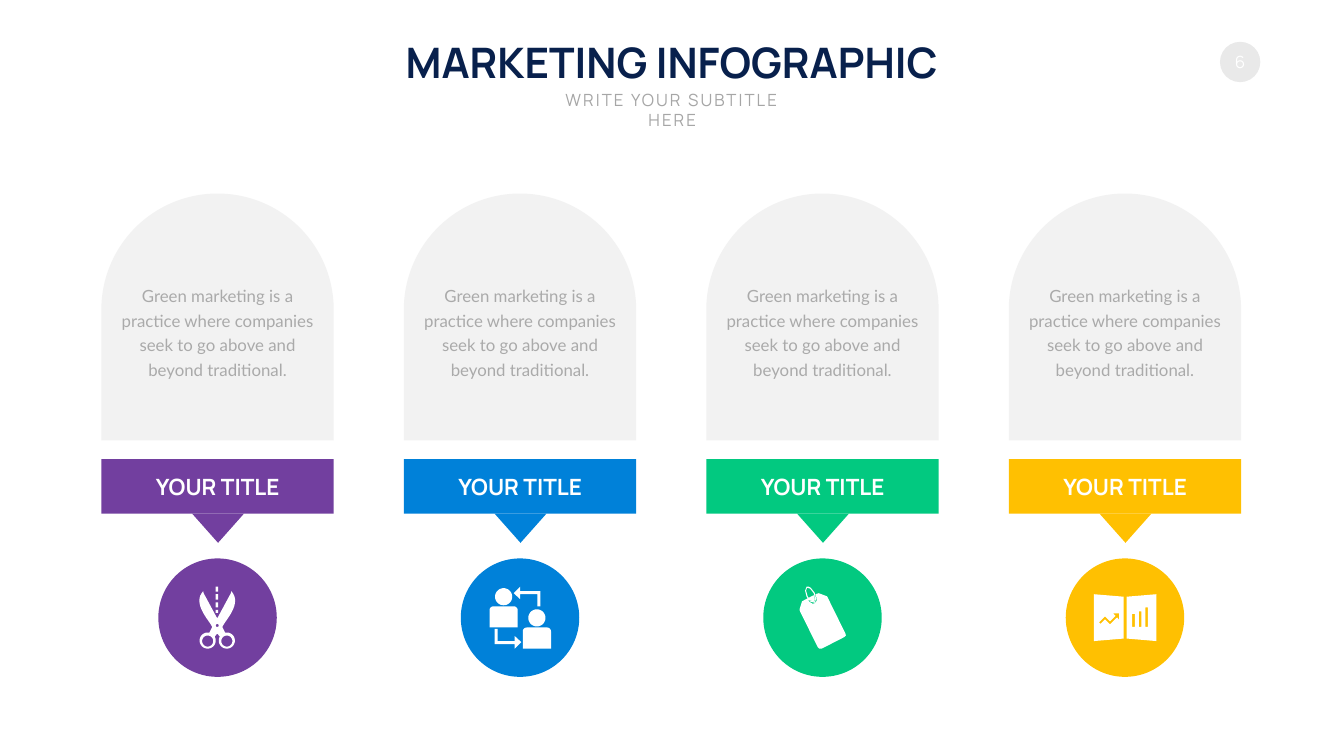
import math

from pptx import Presentation
from pptx.dml.color import RGBColor
from pptx.enum.shapes import MSO_SHAPE
from pptx.enum.text import MSO_ANCHOR, MSO_AUTO_SIZE, PP_ALIGN
from pptx.util import Inches, Pt

RECTANGLE = MSO_SHAPE.RECTANGLE
TRIANGLE = MSO_SHAPE.ISOSCELES_TRIANGLE
OVAL = MSO_SHAPE.OVAL
ARCH = MSO_SHAPE.ROUND_2_SAME_RECTANGLE
CENTER = PP_ALIGN.CENTER
TOP, MIDDLE = MSO_ANCHOR.TOP, MSO_ANCHOR.MIDDLE

COLORS = {
    "navy": "08204C", "subtitle": "A6A6A6", "body": "AAAAAA",
    "white": "FFFFFF", "arch": "F2F2F2", "badge": "E9E9E9",
    "purple": "723F9F", "blue": "0081D9", "green": "02C980", "yellow": "FFC001",
}
HEADING_FONT, BODY_FONT = "Manrope", "Lato"
BODY_TEXT = ("Green marketing is a practice where companies "
             "seek to go above and beyond traditional.")
FIRST_COLUMN, COLUMN_PITCH = 2.01, 6
COLUMN_WIDTH, DISC_SIZE, DISC_TOP = 4.61, 2.35, 11.08


def color(name):
    return RGBColor.from_string(COLORS[name])


def paint(shape, fill):
    shape.shadow.inherit = False
    shape.fill.solid()
    shape.fill.fore_color.rgb = color(fill)
    shape.line.fill.background()


def add_block(slide, kind, left, top, width, height, fill):
    shape = slide.shapes.add_shape(
        kind, Inches(left), Inches(top), Inches(width), Inches(height))
    paint(shape, fill)
    return shape


def write(box, text, size, ink, font=HEADING_FONT, bold=False, anchor=MIDDLE):
    """Put one centred paragraph in a shape and return the paragraph."""
    frame = box.text_frame
    frame.word_wrap = True
    frame.vertical_anchor = anchor
    frame.text = text
    para = frame.paragraphs[0]
    para.alignment = CENTER
    para.space_before = Pt(0)
    para.font.name = font
    para.font.size = Pt(size)
    para.font.bold = bold
    para.font.color.rgb = color(ink)
    return para


def add_label(slide, left, top, width, height, *args, **kwargs):
    box = slide.shapes.add_textbox(
        Inches(left), Inches(top), Inches(width), Inches(height))
    return write(box, *args, **kwargs)


def place(shape, left, top, width, height):
    shape.left, shape.top = Inches(left), Inches(top)
    shape.width, shape.height = Inches(width), Inches(height)
    shape.text_frame.auto_size = MSO_AUTO_SIZE.NONE


def arc(x, y, radius, start=0, end=360, steps=36):
    angles = [math.radians(start + (end - start) * i / steps) for i in range(steps + 1)]
    return [(x + radius * math.cos(a), y + radius * math.sin(a)) for a in angles]


def bezier(p0, p1, p2, p3, steps=12):
    points = []
    for i in range(steps + 1):
        t = i / steps
        weights = ((1 - t) ** 3, 3 * t * (1 - t) ** 2, 3 * t * t * (1 - t), t ** 3)
        points.append(tuple(sum(w * p[axis] for w, p in zip(weights, (p0, p1, p2, p3)))
                            for axis in (0, 1)))
    return points


def bar(x, y, width, height):
    return [(x, y), (x + width, y), (x + width, y + height), (x, y + height)]


def mirror(points, axis):
    return [(2 * axis - x, y) for x, y in reversed(points)]


def scissors():
    axis = 0.35
    half = [(axis, 0.63), (0.62, 0.13), (0.63, 0.09),
            *bezier((0.66, 0.13), (0.79, 0.32), (0.61, 0.56), (0.49, 0.73)),
            (0.45, 0.8), (0.51, 0.92), *arc(0.54, 1.07, 0.16, -101, 210),
            (0.4, 0.99), (axis, 0.93)]
    finger_hole = arc(0.54, 1.08, 0.11)
    dashes = [bar(0.32, y, 0.05, height)
              for y, height in ((0, 0.1), (0.15, 0.11), (0.31, 0.1), (0.46, 0.06))]
    return [half + mirror(half, axis), finger_hole, mirror(finger_hole, axis),
            arc(axis, 0.77, 0.03), *dashes]


def person(x, y):
    body = [*arc(x + 0.08, y + 0.47, 0.08, 180, 270, 6),
            *arc(x + 0.48, y + 0.47, 0.08, 270, 360, 6),
            (x + 0.56, y + 0.81), (x, y + 0.81)]
    return [arc(x + 0.28, y + 0.2, 0.17), body]


def people():
    arrow = [(0.61, 0), (0.61, 0.09), (1.01, 0.09), (1.01, 0.39), (0.95, 0.39),
             (0.95, 0.15), (0.61, 0.15), (0.61, 0.25), (0.48, 0.13)]
    turned = [(1.11 - x, 1.23 - y) for x, y in arrow]
    return [*person(0, 0), *person(0.66, 0.42), arrow, turned]


def price_tag():
    body = [(0.38, 0.13), (0.54, 0.19), (0.55, 0.2), (0.91, 0.93), (0.92, 0.97),
            (0.89, 1), (0.44, 1.23), (0.39, 1.23), (0.36, 1.2), (0, 0.47),
            (0, 0.45), (0.05, 0.29), (0.07, 0.28), (0.28, 0.17), (0.3, 0.24),
            (0.28, 0.29), (0.24, 0.27), (0.22, 0.26), (0.17, 0.28), (0.21, 0.31),
            (0.26, 0.34), (0.3, 0.33), (0.34, 0.28), (0.34, 0.24), (0.32, 0.15)]
    loop = [(0.18, 0), (0.22, 0.02), (0.3, 0.12), (0.33, 0.24), (0.3, 0.32),
            (0.22, 0.3), (0.2, 0.28), (0.22, 0.27), (0.29, 0.3), (0.31, 0.24),
            (0.28, 0.13), (0.21, 0.04), (0.15, 0.02), (0.13, 0.08), (0.16, 0.19),
            (0.18, 0.22), (0.16, 0.23), (0.14, 0.2), (0.11, 0.08), (0.14, 0)]
    return [body, loop]


def report():
    page = [(0.59, 0.05), (0, 0), (0, 0.93), (0.59, 0.88)]
    bars = [bar(0.76 + 0.13 * i, top, 0.05, 0.65 - top)
            for i, top in enumerate((0.39, 0.34, 0.26))]
    trend = [(0.1, 0.56), (0.22, 0.44), (0.32, 0.54), (0.43, 0.43), (0.38, 0.38),
             (0.5, 0.38), (0.5, 0.51), (0.46, 0.46), (0.32, 0.6), (0.22, 0.5),
             (0.13, 0.59)]
    return [page, mirror(page, 0.62), *bars, trend]


def add_icon(slide, left, top, contours):
    """Draw all contours as one white outline; inner contours become holes."""
    scaled = [[(Inches(x), Inches(y)) for x, y in contour] for contour in contours]
    builder = slide.shapes.build_freeform(*scaled[0][0], scale=1.0)
    for index, contour in enumerate(scaled):
        if index:
            builder.move_to(*contour[0])
        builder.add_line_segments(contour[1:], close=True)
    paint(builder.convert_to_shape(Inches(left), Inches(top)), "white")


def add_column(slide, left, fill, contours, icon_x, icon_y):
    disc_left = left + (COLUMN_WIDTH - DISC_SIZE) / 2
    add_block(slide, RECTANGLE, left, 9.11, COLUMN_WIDTH, 1.08, fill)
    add_block(slide, TRIANGLE, left + 1.8, 10.19, 1.03, 0.58, fill).rotation = 180
    arch = add_block(slide, ARCH, left, 3.84, COLUMN_WIDTH, 4.9, "arch")
    arch.adjustments[0], arch.adjustments[1] = 0.5, 0
    para = add_label(slide, left + 0.29, 5.55, 4.03, 2.01,
                     BODY_TEXT, 24, "body", font=BODY_FONT)
    para.line_spacing, para.space_before = Pt(35), Pt(4.8)
    add_label(slide, left + 0.97, 9.33, 2.68, 0.64, "YOUR TITLE", 32, "white", bold=True)
    add_block(slide, OVAL, disc_left, DISC_TOP, DISC_SIZE, DISC_SIZE, fill)
    add_icon(slide, disc_left + icon_x, DISC_TOP + icon_y, contours)


def add_heading(slide):
    title, subtitle = slide.placeholders
    place(title, 7.71, 0.67, 11.23, 1.11)
    write(title, "MARKETING INFOGRAPHIC", 60, "navy", bold=True, anchor=TOP)
    place(subtitle, 10.62, 1.72, 5.43, 0.9)
    para = write(subtitle, "WRITE YOUR SUBTITLE HERE", 24, "subtitle", anchor=TOP)
    para.runs[0].font._element.set("spc", "300")
    badge = add_block(slide, OVAL, 24.2, 0.83, 0.8, 0.8, "badge")
    write(badge, "6", 24, "white")


def main():
    deck = Presentation()
    deck.slide_width, deck.slide_height = Inches(26.66), Inches(15)
    slide = deck.slides.add_slide(deck.slide_layouts[0])
    add_heading(slide)
    columns = [
        ("purple", scissors(), 0.82, 0.56),
        ("blue", people(), 0.57, 0.56),
        ("green", price_tag(), 0.72, 0.56),
        ("yellow", report(), 0.56, 0.71),
    ]
    for index, column in enumerate(columns):
        add_column(slide, FIRST_COLUMN + index * COLUMN_PITCH, *column)
    deck.save("out.pptx")


if __name__ == "__main__":
    main()
